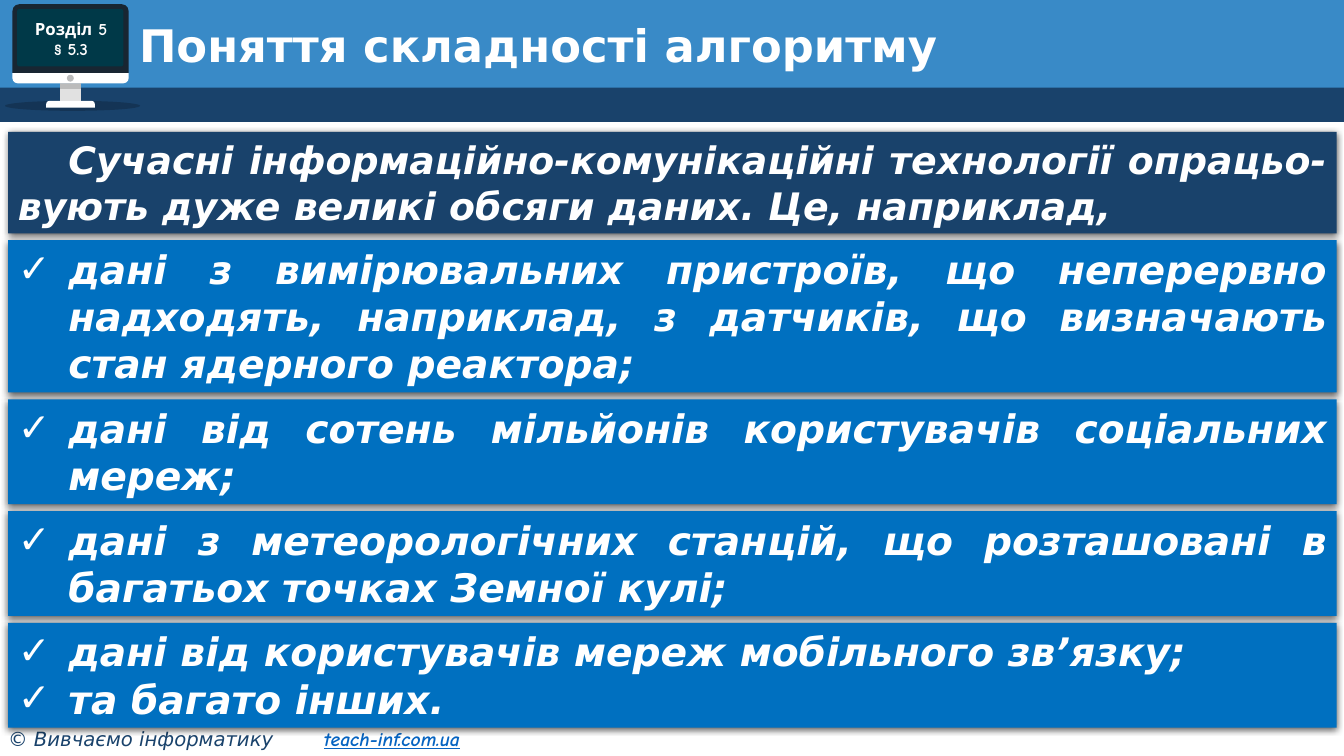
from lxml import etree
from pptx import Presentation
from pptx.dml.color import RGBColor
from pptx.enum import shapes, text
from pptx.oxml import ns
from pptx.util import Pt

COLORS = {
    "sky": "398AC7", "navy": "19426B", "blue": "0070C0", "white": "FFFFFF",
    "black": "000000", "frame": "182632", "screen": "003948",
    "stand": "E1E1E1", "gray": "BBBBBB", "link": "0563C1",
}
SANS, COMIC = "DejaVu Sans", "Comic Neue"
TITLE = "Поняття складності алгоритму"
CHAPTER = ["Розділ 5", "§ 5.3"]
COPYRIGHT, SITE = "© Вивчаємо інформатику", "teach-inf.com.ua"
INTRO = "Сучасні інформаційно-комунікаційні технології опрацьо-вують дуже великі обсяги даних. Це, наприклад,"
PANELS = [
    (72.4, "navy", 27, [INTRO]),
    (108.8, "blue", 28, ["дані з вимірювальних пристроїв, що неперервно надходять, наприклад, з датчиків, що визначають стан ядерного реактора;"]),
    (74.9, "blue", 28, ["дані від сотень мільйонів користувачів соціальних мереж;"]),
    (74.9, "blue", 28, ["дані з метеорологічних станцій, що розташовані в багатьох точках Земної кулі;"]),
    (74.9, "blue", 28, ["дані від користувачів мереж мобільного зв’язку;", "та багато інших."]),
]
PANEL_LEFT, PANEL_TOP, PANEL_WIDTH, PANEL_GAP = 5.76, 94.3, 948.96, 4.9
INDENT = 36

KIND = shapes.MSO_SHAPE
BACKDROP = [
    (KIND.RECTANGLE, "sky", (0, 0, 960, 65.5), []),
    (KIND.RECTANGLE, "navy", (0, 62.7, 960, 24.5), []),
]
MONITOR = [
    (KIND.ROUND_2_SAME_RECTANGLE, "frame", (8.9, 3, 83, 49.3), [0.1, 0]),
    (KIND.ROUND_2_SAME_RECTANGLE, "white", (8.9, 52.3, 83, 7.2), [0, 0.5]),
    (KIND.RECTANGLE, "stand", (42.9, 59.5, 15, 12.5), []),
    (KIND.RECTANGLE, "gray", (42.9, 59.5, 15, 4), []),
    (KIND.ROUND_2_SAME_RECTANGLE, "white", (33, 72, 34.8, 5), [0.5, 0]),
    (KIND.OVAL, "gray", (47.8, 53.4, 4.9, 4.9), []),
    (KIND.ROUNDED_RECTANGLE, "screen", (12.3, 6.5, 75.8, 41), [0.036]),
]


def rgb(name):
    return RGBColor.from_string(COLORS[name])


def add_node(parent, tag, **attrs):
    return etree.SubElement(parent, ns.qn(tag), attrs)


def add_block(slide, kind, color, box, adjustments=()):
    sp = slide.shapes.add_shape(kind, *map(Pt, box))
    sp.shadow.inherit = False
    sp.fill.solid()
    sp.fill.fore_color.rgb = rgb(color)
    sp.line.fill.background()
    for i, value in enumerate(adjustments):
        sp.adjustments[i] = value
    return sp


def add_text_box(slide, box, anchor=text.MSO_ANCHOR.TOP):
    tf = slide.shapes.add_textbox(*map(Pt, box)).text_frame
    tf.word_wrap = True
    tf.vertical_anchor = anchor
    return tf


def add_run(p, words, size, color, name, bold=False, italic=False, underline=False):
    r = p.add_run()
    r.text = words
    r.font.size = Pt(size)
    r.font.name = name
    r.font.color.rgb = rgb(color)
    r.font.bold, r.font.italic, r.font.underline = bold, italic, underline


def add_paragraphs(tf, lines):
    for i, line in enumerate(lines):
        yield (tf.add_paragraph() if i else tf.paragraphs[0]), line


def add_shadow(sp):
    effects = sp._element.spPr.find(ns.qn("a:effectLst"))
    shadow = add_node(effects, "a:outerShdw", blurRad=str(Pt(4.5)), dist=str(Pt(1.5)),
                      dir="5400000", algn="t", rotWithShape="0")
    color = add_node(shadow, "a:srgbClr", val=COLORS["black"])
    add_node(color, "a:alpha", val="63000")


def add_panel(slide, top, height, color, size, lines):
    sp = add_block(slide, KIND.RECTANGLE, color, (PANEL_LEFT, top, PANEL_WIDTH, height))
    add_shadow(sp)
    tf = sp.text_frame
    tf.word_wrap = True
    tf.vertical_anchor = text.MSO_ANCHOR.TOP
    for p, line in add_paragraphs(tf, lines):
        p.alignment = text.PP_ALIGN.JUSTIFY
        pPr = p._p.get_or_add_pPr()
        if line == INTRO:
            pPr.set("indent", str(Pt(INDENT)))
        else:
            pPr.set("marL", str(Pt(INDENT)))
            pPr.set("indent", str(Pt(-INDENT)))
            add_node(pPr, "a:buFont", typeface=SANS)
            add_node(pPr, "a:buChar", char="✓")
        add_run(p, line, size, "white", SANS, bold=True, italic=True)


def add_header(slide):
    for block in BACKDROP:
        add_block(slide, *block)
    base = add_block(slide, KIND.OVAL, "black", (3.6, 72, 96.5, 7.2))
    fill = base._element.spPr.find(ns.qn("a:solidFill"))
    add_node(fill[0], "a:alpha", val="20000")
    for block in MONITOR:
        add_block(slide, *block)
    tf = add_text_box(slide, (9.4, 6.5, 82.8, 42.5), text.MSO_ANCHOR.MIDDLE)
    for p, line in add_paragraphs(tf, CHAPTER):
        p.alignment = text.PP_ALIGN.CENTER
        add_run(p, line, 12, "white", COMIC, bold=True)
    tf = add_text_box(slide, (92.2, 13, 843.8, 41.8), text.MSO_ANCHOR.MIDDLE)
    p = tf.paragraphs[0]
    p.line_spacing = 0.9
    add_run(p, TITLE, 32, "white", SANS, bold=True)


def add_footer(slide):
    tf = add_text_box(slide, (0, 515.5, 375, 24.5))
    tf.margin_left = Pt(5.8)
    p = tf.paragraphs[0]
    tabs = add_node(p._p.get_or_add_pPr(), "a:tabLst")
    add_node(tabs, "a:tab", pos=str(Pt(225.6)), algn="l")
    add_run(p, COPYRIGHT + "\t", 14, "navy", SANS, italic=True)
    add_run(p, SITE, 14, "link", COMIC, bold=True, italic=True, underline=True)


def main():
    prs = Presentation()
    prs.slide_width, prs.slide_height = Pt(960), Pt(540)
    s = prs.slides.add_slide(prs.slide_layouts[6])
    add_header(s)
    add_footer(s)
    top = PANEL_TOP
    for height, color, size, lines in PANELS:
        add_panel(s, top, height, color, size, lines)
        top += height + PANEL_GAP
    prs.save("out.pptx")


if __name__ == "__main__":
    main()
